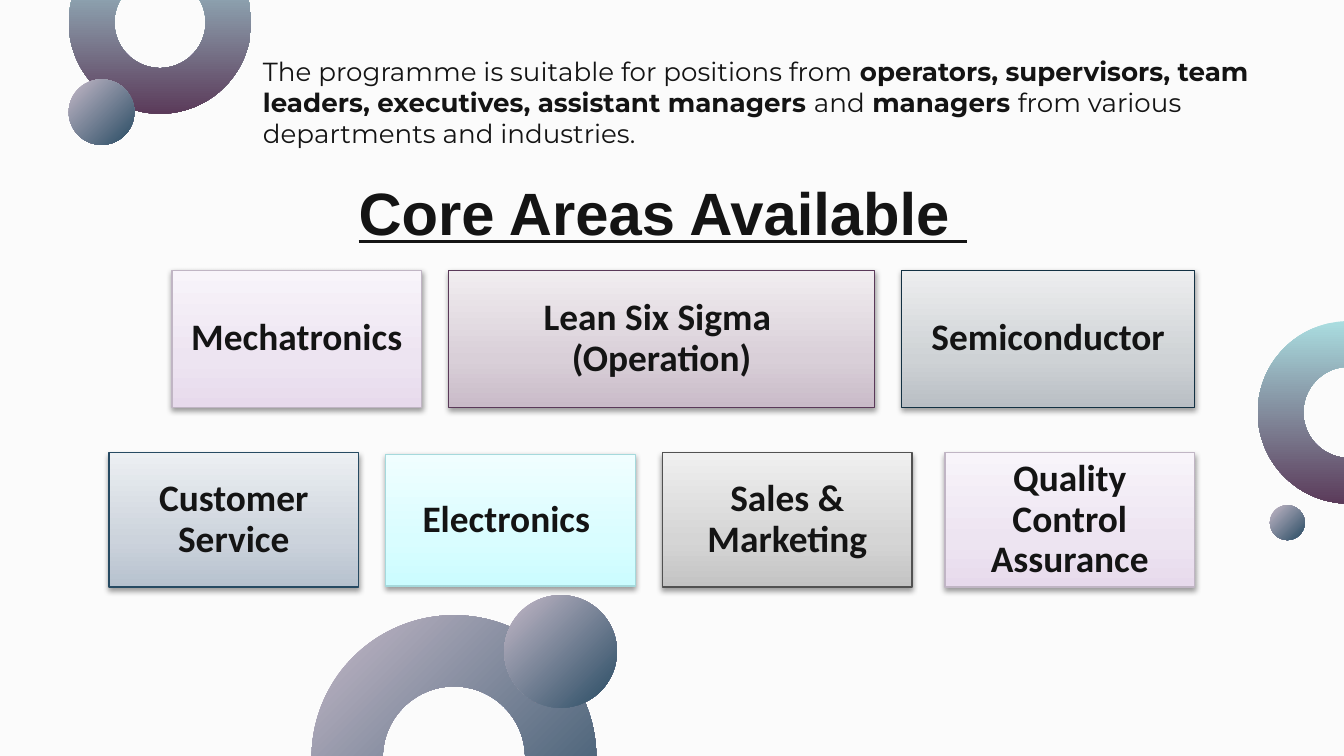
"""Build the slide of core training areas."""
from typing import NamedTuple

from lxml import etree
from pptx import Presentation
from pptx.dml.color import RGBColor
from pptx.enum.shapes import MSO_SHAPE
from pptx.enum.text import MSO_ANCHOR, MSO_AUTO_SIZE, PP_ALIGN
from pptx.oxml.ns import qn
from pptx.util import Cm, Pt

RECT, OVAL = MSO_SHAPE.RECTANGLE, MSO_SHAPE.OVAL
RING, ARC = MSO_SHAPE.DONUT, MSO_SHAPE.BLOCK_ARC
MIDDLE, FIXED = MSO_ANCHOR.MIDDLE, MSO_AUTO_SIZE.NONE
LEFT, CENTER = PP_ALIGN.LEFT, PP_ALIGN.CENTER

COLORS = {"page": "FBFBFB", "ink": "141414", "shadow": "000000"}
FADES = {
    "dusk": ("C4B9C8", "284B63"),
    "aqua": ("AADDE0", "5B3B5A"),
    "plum": ("C9BBC8", "D9CFD8", "F1EDF0"),
    "lilac": ("E7DAEC", "EDE4F1", "F8F4FA"),
    "gray": ("C3C3C3", "D5D5D5", "EFEFEF"),
    "blue": ("B6C1CE", "CCD3DC", "ECEFF2"),
    "cyan": ("CBFCFF", "D9FDFF", "F0FEFF"),
    "steel": ("B9BEC4", "CED2D5", "EDEEEF"),
}
EDGES = {
    "plum": "5A3959", "lilac": "C0B5C4", "gray": "515151",
    "blue": "264A62", "cyan": "A5D9DC", "steel": "133143",
}


class Round(NamedTuple):
    """A round ornament, in centimetres."""
    kind: int
    left: float
    top: float
    size: float
    fade: str
    angle: int


class Card(NamedTuple):
    """A core area card, in centimetres."""
    text: str
    left: float
    top: float
    width: float
    height: float
    fade: str


ROUNDS = [
    Round(ARC, 5.89, 11.63, 5.38, "dusk", 45),
    Round(RING, 1.3, -1.3, 3.45, "aqua", 90),
    Round(OVAL, 1.3, 1.5, 1.24, "dusk", 45),
    Round(RING, 23.77, 6.07, 3.45, "aqua", 90),
    Round(OVAL, 24, 9.55, 0.66, "dusk", 45),
    Round(OVAL, 9.53, 11.25, 2.13, "dusk", 45),
]
CARDS = [
    Card("Mechatronics", 3.25, 5.11, 4.72, 2.59, "lilac"),
    Card("Lean Six Sigma \v(Operation)", 8.48, 5.11, 8.05, 2.59, "plum"),
    Card("Semiconductor", 17.04, 5.11, 5.54, 2.59, "steel"),
    Card("Customer Service", 2.06, 8.56, 4.72, 2.54, "blue"),
    Card("Electronics ", 7.29, 8.59, 4.72, 2.49, "cyan"),
    Card("Sales & Marketing", 12.52, 8.56, 4.72, 2.54, "gray"),
    Card("Quality Control Assurance", 17.86, 8.56, 4.72, 2.54, "lilac"),
]
INTRO = [
    ("The programme is suitable for positions from ", False),
    ("operators, supervisors, team leaders, executives, assistant managers ", True),
    ("and", False),
    (" managers ", True),
    ("from various departments and industries.", False),
]


def add_fade(shape, name: str, angle: int) -> None:
    """Fill a new shape with a named gradient."""
    hues = FADES[name]
    spots = (0, 100) if len(hues) == 2 else (0, 35, 100)
    fill = etree.SubElement(shape.element.spPr, qn("a:gradFill"), rotWithShape="1")
    stops = etree.SubElement(fill, qn("a:gsLst"))
    for spot, hue in zip(spots, hues):
        stop = etree.SubElement(stops, qn("a:gs"), pos=str(spot * 1000))
        etree.SubElement(stop, qn("a:srgbClr"), val=hue)
    etree.SubElement(fill, qn("a:lin"), ang=str(angle * 60000), scaled="0")


def add_shadow(shape) -> None:
    """Cast a soft shadow straight down."""
    shape.shadow.inherit = False
    effects = shape.element.spPr.find(qn("a:effectLst"))
    shade = etree.SubElement(
        effects, qn("a:outerShdw"), blurRad=str(Pt(3.1)), dist=str(Pt(1.6)),
        dir="5400000", rotWithShape="0")
    hue = etree.SubElement(shade, qn("a:srgbClr"), val=COLORS["shadow"])
    etree.SubElement(hue, qn("a:alpha"), val="38000")


def set_frame(frame) -> None:
    """Wrap and centre text in a frame with even insets."""
    frame.word_wrap = True
    frame.auto_size = FIXED
    frame.vertical_anchor = MIDDLE
    frame.margin_left = frame.margin_right = Cm(0.25)
    frame.margin_top = frame.margin_bottom = Cm(0.25)


def set_font(para, face: str, size: int, align: int) -> None:
    """Set the font and alignment of a paragraph."""
    para.alignment = align
    para.font.name = face
    para.font.size = Pt(size)
    para.font.color.rgb = RGBColor.from_string(COLORS["ink"])


def draw_round(slide, item: Round) -> None:
    """Draw one round ornament."""
    size = Cm(item.size)
    shape = slide.shapes.add_shape(item.kind, Cm(item.left), Cm(item.top), size, size)
    add_fade(shape, item.fade, item.angle)
    shape.line.fill.background()
    shape.shadow.inherit = False


def draw_card(slide, card: Card) -> None:
    """Draw one core area card."""
    shape = slide.shapes.add_shape(
        RECT, Cm(card.left), Cm(card.top), Cm(card.width), Cm(card.height))
    add_fade(shape, card.fade, 270)
    shape.line.color.rgb = RGBColor.from_string(EDGES[card.fade])
    shape.line.width = Pt(0.75)
    add_shadow(shape)
    set_frame(shape.text_frame)
    para = shape.text_frame.paragraphs[0]
    para.text = card.text
    para.line_spacing = 0.9
    set_font(para, "Calibri", 20, CENTER)
    para.font.bold = True


def draw_intro(slide) -> None:
    """Draw the introduction with its bold roles."""
    box = slide.shapes.add_textbox(Cm(4.72), Cm(0.71), Cm(20.07), Cm(2.44))
    set_frame(box.text_frame)
    para = box.text_frame.paragraphs[0]
    set_font(para, "Montserrat", 14, LEFT)
    for text, bold in INTRO:
        run = para.add_run()
        run.text = text
        run.font.bold = bold


def set_title(slide) -> None:
    """Place and format the heading."""
    title = slide.shapes.title
    title.left, title.top = Cm(5.11), Cm(3.45)
    title.width, title.height = Cm(14.83), Cm(1.09)
    set_frame(title.text_frame)
    para = title.text_frame.paragraphs[0]
    para.text = "Core Areas Available "
    set_font(para, "Arial", 32, CENTER)
    para.font.bold = para.font.underline = True


def main() -> None:
    """Build and save the slide."""
    deck = Presentation()
    deck.slide_width, deck.slide_height = Cm(25.4), Cm(14.29)
    slide = deck.slides.add_slide(deck.slide_layouts[5])
    page = slide.background.fill
    page.solid()
    page.fore_color.rgb = RGBColor.from_string(COLORS["page"])
    for item in ROUNDS:
        draw_round(slide, item)
    draw_intro(slide)
    set_title(slide)
    for card in CARDS:
        draw_card(slide, card)
    deck.save("out.pptx")


if __name__ == "__main__":
    main()
